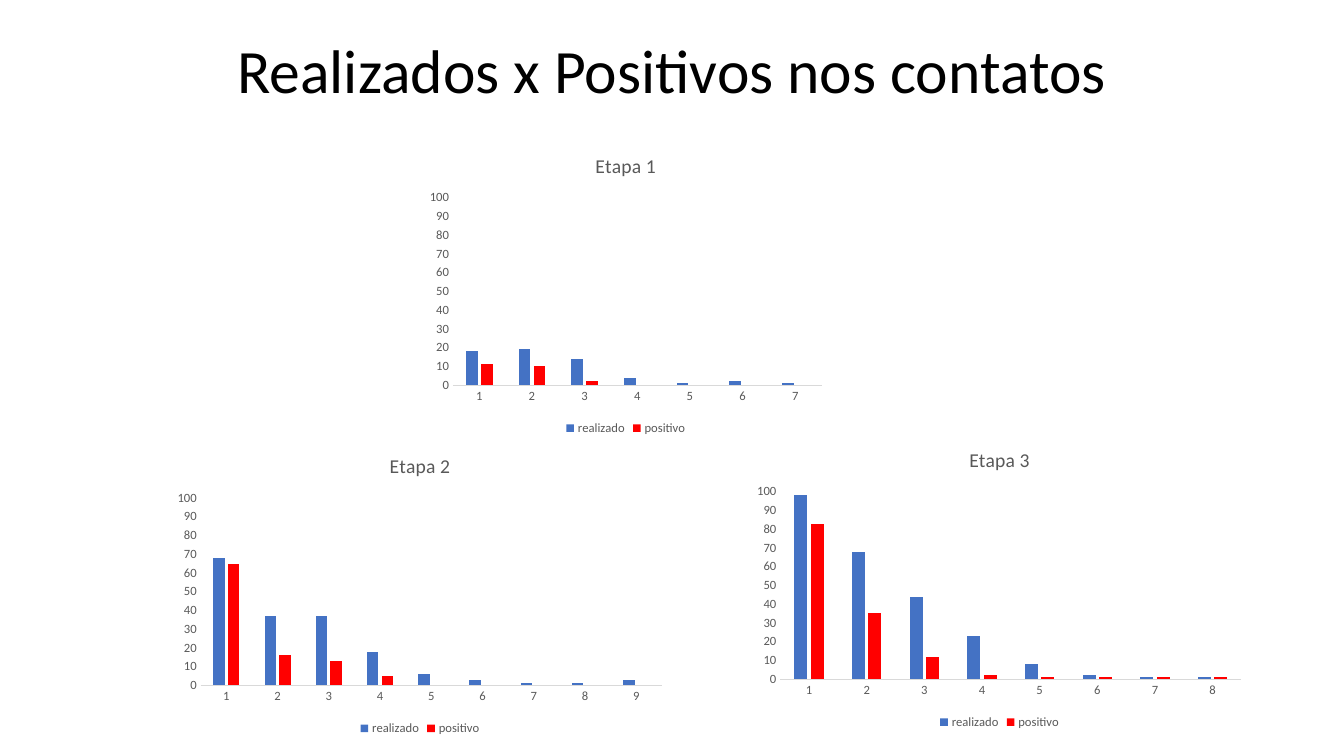
import pptx
import pptx.chart.data
import pptx.dml.color
import pptx.enum.chart
import pptx.enum.text
import pptx.oxml
import pptx.util

Pt = pptx.util.Pt
FONT = "Calibri"
GREY = "595959"
COLORS = {"realizado": "4472C4", "positivo": "FF0000"}
HEIGHT = 216
# Name, left, top, width, values of realizado, values of positivo
STAGES = [
    ("Etapa 2", 120, 312.5, 360,
     [68, 37, 37, 18, 6, 3, 1, 1, 3], [65, 16, 13, 5]),
    ("Etapa 1", 300, 98, 294,
     [18, 19, 14, 4, 1, 2, 1], [11, 10, 2]),
    ("Etapa 3", 534, 308, 360,
     [98, 68, 44, 23, 8, 2, 1, 1], [83, 35, 12, 2, 1, 1, 1, 1]),
]


def color(text):
    return pptx.dml.color.RGBColor.from_string(text)


def style(font, size, shade):
    font.name = FONT
    font.size = Pt(size)
    font.bold = False
    font.color.rgb = color(shade)


def add_title(slide, text):
    title = slide.shapes.title
    title.left, title.top = Pt(66), Pt(0)
    title.width, title.height = Pt(828), Pt(104.4)
    frame = title.text_frame
    frame.text = text
    frame.word_wrap = True
    frame.vertical_anchor = pptx.enum.text.MSO_ANCHOR.MIDDLE
    line = frame.paragraphs[0]
    line.alignment = pptx.enum.text.PP_ALIGN.CENTER
    line.line_spacing = 0.9
    style(line.runs[0].font, 44, "000000")


def place_plot(chart, width):
    """Fix the inner plot area, with equal side margins in every chart."""
    parts = {"x": 23.5 / width, "y": 0.2, "w": 1 - 30.5 / width, "h": 0.62}
    sizes = "".join(f'<c:{key} val="{part:.3f}"/>'
                    for key, part in parts.items())
    namespace = "http://schemas.openxmlformats.org/drawingml/2006/chart"
    layout = pptx.oxml.parse_xml(
        f'<c:layout xmlns:c="{namespace}"><c:manualLayout>'
        '<c:layoutTarget val="inner"/>'
        '<c:xMode val="edge"/><c:yMode val="edge"/>'
        f'{sizes}</c:manualLayout></c:layout>')
    area = chart.element.find(f".//{{{namespace}}}plotArea")
    for old in area.findall(f"{{{namespace}}}layout"):
        area.remove(old)
    area.insert(0, layout)


def style_axes(chart):
    for axis in (chart.category_axis, chart.value_axis):
        axis.has_major_gridlines = False
        axis.major_tick_mark = pptx.enum.chart.XL_TICK_MARK.NONE
        axis.minor_tick_mark = pptx.enum.chart.XL_TICK_MARK.NONE
        style(axis.tick_labels.font, 9, GREY)
    line = chart.category_axis.format.line
    line.color.rgb = color("D9D9D9")
    line.width = Pt(0.75)
    scale = chart.value_axis
    scale.format.line.fill.background()
    scale.minimum_scale, scale.maximum_scale = 0, 100
    scale.major_unit = 10
    scale.tick_labels.number_format = "###0"
    scale.tick_labels.number_format_is_linked = False


def add_stage(slide, name, left, top, width, done, found):
    data = pptx.chart.data.CategoryChartData(number_format="###0")
    data.categories = [str(step + 1) for step in range(len(done))]
    gaps = [None] * (len(done) - len(found))
    for label, values in zip(COLORS, (done, found + gaps)):
        data.add_series(label, values)
    chart = slide.shapes.add_chart(
        pptx.enum.chart.XL_CHART_TYPE.COLUMN_CLUSTERED,
        Pt(left), Pt(top), Pt(width), Pt(HEIGHT), data).chart
    style(chart.font, 10, "000000")

    chart.has_title = True
    frame = chart.chart_title.text_frame
    frame.text = name
    style(frame.paragraphs[0].runs[0].font, 14, GREY)

    chart.has_legend = True
    chart.legend.position = pptx.enum.chart.XL_LEGEND_POSITION.BOTTOM
    chart.legend.include_in_layout = False
    style(chart.legend.font, 9, GREY)

    plot = chart.plots[0]
    plot.vary_by_categories = False
    plot.gap_width, plot.overlap = 219, -27
    for series in plot.series:
        series.format.fill.solid()
        series.format.fill.fore_color.rgb = color(COLORS[series.name])
    style_axes(chart)
    place_plot(chart, width)


def main():
    deck = pptx.Presentation()
    deck.slide_width, deck.slide_height = Pt(960), Pt(540)
    slide = deck.slides.add_slide(deck.slide_layouts[5])
    add_title(slide, "Realizados x Positivos nos contatos")
    for stage in STAGES:
        add_stage(slide, *stage)
    deck.save("out.pptx")


if __name__ == "__main__":
    main()
